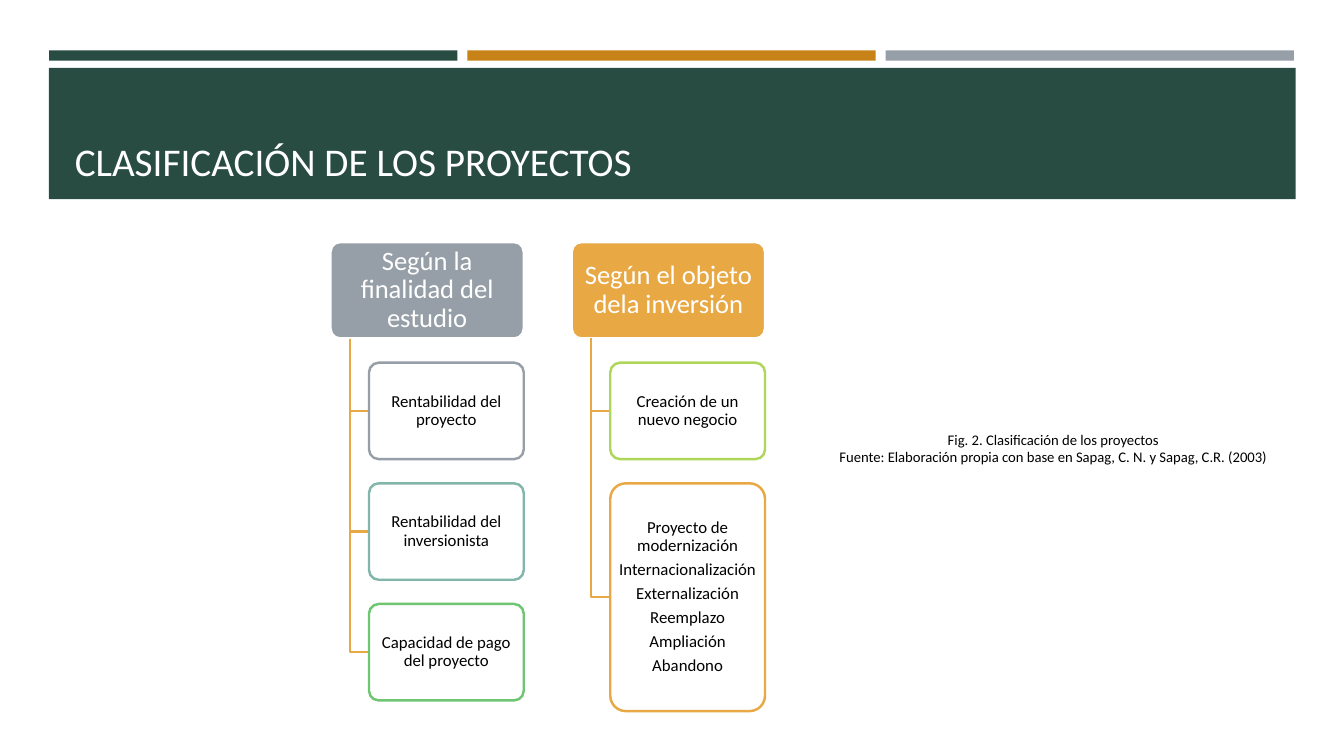
"""Builds the slide on how projects are classified."""
from pptx import Presentation
from pptx.dml.color import RGBColor
from pptx.enum.shapes import MSO_SHAPE
from pptx.enum.text import MSO_ANCHOR, MSO_AUTO_SIZE, PP_ALIGN
from pptx.util import Cm, Pt

GREEN = RGBColor(0x28, 0x4C, 0x42)
BROWN = RGBColor(0xC8, 0x83, 0x18)
GREY = RGBColor(0x96, 0x9F, 0xA7)
GOLD = RGBColor(0xE8, 0xA8, 0x44)
TEAL = RGBColor(0x83, 0xB6, 0xAA)
LEAF = RGBColor(0x6E, 0xC6, 0x72)
LIME = RGBColor(0xAE, 0xD7, 0x5A)
WHITE = RGBColor(0xFF, 0xFF, 0xFF)
BLACK = RGBColor(0, 0, 0)

TITLE = "CLASIFICACIÓN DE LOS PROYECTOS"
BARS = [GREEN, BROWN, GREY]
GROUPS = [
    ("Según la finalidad del estudio", GREY, [
        (["Rentabilidad del proyecto"], GREY, 2.43),
        (["Rentabilidad del inversionista"], TEAL, 2.43),
        (["Capacidad de pago del proyecto"], LEAF, 2.43),
    ]),
    ("Según el objeto dela inversión", GOLD, [
        (["Creación de un nuevo negocio"], LIME, 2.43),
        (["Proyecto de modernización", "Internacionalización", "Externalización",
          "Reemplazo", "Ampliación", "Abandono"], GOLD, 5.74),
    ]),
]
NOTE = ["Fig. 2. Clasificación de los proyectos",
        "Fuente: Elaboración propia con base en Sapag, C. N. y Sapag, C.R. (2003)"]

LEFT, TOP, STEP = 8.33, 6.1, 6.08
HEAD_W, HEAD_H, GAP = 4.87, 2.43, 0.61
STEM, INDENT, ITEM_W = 0.49, 0.97, 3.9

HEAD = {"size": Pt(19), "name": "Calibri"}
ITEM = {"size": Pt(12), "name": "Calibri"}
SMALL = {"size": Pt(10.5), "name": "Calibri"}
BIG = {"size": Pt(28), "name": "Calibri", "bold": False}
CENTER = {"alignment": PP_ALIGN.CENTER}


def put(thing, vals):
    """Set each named value on an object."""
    for key, val in vals.items():
        setattr(thing, key, val)


def place(x, y, wide, high):
    """Give a place in centimetres as named lengths."""
    return {"left": Cm(x), "top": Cm(y), "width": Cm(wide), "height": Cm(high)}


def write(frame, lines, font, ink, para):
    """Fill a text frame, one paragraph a line."""
    frame.text = "\n".join(lines)
    for part in frame.paragraphs:
        put(part, para)
        run = part.runs[0]
        put(run.font, font)
        run.font.color.rgb = ink


def block(slide, kind, box, fill, edge=None):
    """Draw a filled shape with an optional edge."""
    shape = slide.shapes.add_shape(kind, **box)
    shape.shadow.inherit = False
    shape.fill.solid()
    shape.fill.fore_color.rgb = fill
    if edge is None:
        shape.line.fill.background()
    else:
        shape.line.color.rgb = edge
        shape.line.width = Pt(1.75)
    return shape


def card(slide, box, lines, fill, edge, font, ink, pad):
    """Draw a rounded card with centred text."""
    shape = block(slide, MSO_SHAPE.ROUNDED_RECTANGLE, box, fill, edge)
    shape.adjustments[0] = 0.1
    side, end = pad
    put(shape.text_frame, {
        "margin_left": Cm(side), "margin_right": Cm(side),
        "margin_top": Cm(end), "margin_bottom": Cm(end),
        "word_wrap": True, "vertical_anchor": MSO_ANCHOR.MIDDLE})
    after = Pt(round(font["size"].pt * 0.35, 1))
    write(shape.text_frame, lines, font, ink,
          {**CENTER, "line_spacing": 0.9, "space_after": after})


def branch(slide, x, start, end):
    """Draw the bent line from a head to an item."""
    pen = slide.shapes.build_freeform(Cm(x), Cm(start))
    pen.add_line_segments([(Cm(x), Cm(end)), (Cm(x + INDENT - STEM), Cm(end))], close=False)
    shape = pen.convert_to_shape()
    shape.shadow.inherit = False
    shape.fill.background()
    shape.line.color.rgb = GOLD
    shape.line.width = Pt(1.75)


def main():
    """Build and save the slide."""
    deck = Presentation()
    put(deck, {"slide_width": Cm(33.87), "slide_height": Cm(19.05)})
    slide = deck.slides.add_slide(deck.slide_layouts[5])

    for col, tint in enumerate(BARS):
        block(slide, MSO_SHAPE.RECTANGLE, place(1.24 + col * 10.54, 1.27, 10.29, 0.26), tint)
    block(slide, MSO_SHAPE.RECTANGLE, place(1.23, 1.71, 31.42, 3.31), GREEN)

    title = slide.shapes.title
    slide.shapes._spTree.append(title._element)
    put(title, place(1.63, 1.96, 30.63, 2.82))
    put(title.text_frame, {"vertical_anchor": MSO_ANCHOR.BOTTOM, "word_wrap": True,
                           "auto_size": MSO_AUTO_SIZE.NONE})
    write(title.text_frame, [TITLE], BIG, WHITE, {"alignment": PP_ALIGN.LEFT})

    for col, (name, tint, items) in enumerate(GROUPS):
        x, base = LEFT + col * STEP, TOP + HEAD_H
        card(slide, place(x, TOP, HEAD_W, HEAD_H), [name], tint, WHITE, HEAD, WHITE, (0.1, 0.08))
        y = base + GAP
        for lines, edge, high in items:
            branch(slide, x + STEM, base, y + high / 2)
            card(slide, place(x + INDENT, y, ITEM_W, high), lines, WHITE, edge,
                 ITEM, BLACK, (0.08, 0.05))
            y += high + GAP

    note = slide.shapes.add_textbox(**place(20.83, 10.72, 11.43, 1.14))
    put(note.text_frame, {"word_wrap": False, "auto_size": MSO_AUTO_SIZE.SHAPE_TO_FIT_TEXT})
    write(note.text_frame, NOTE, SMALL, BLACK, CENTER)
    deck.save("out.pptx")


if __name__ == "__main__":
    main()
